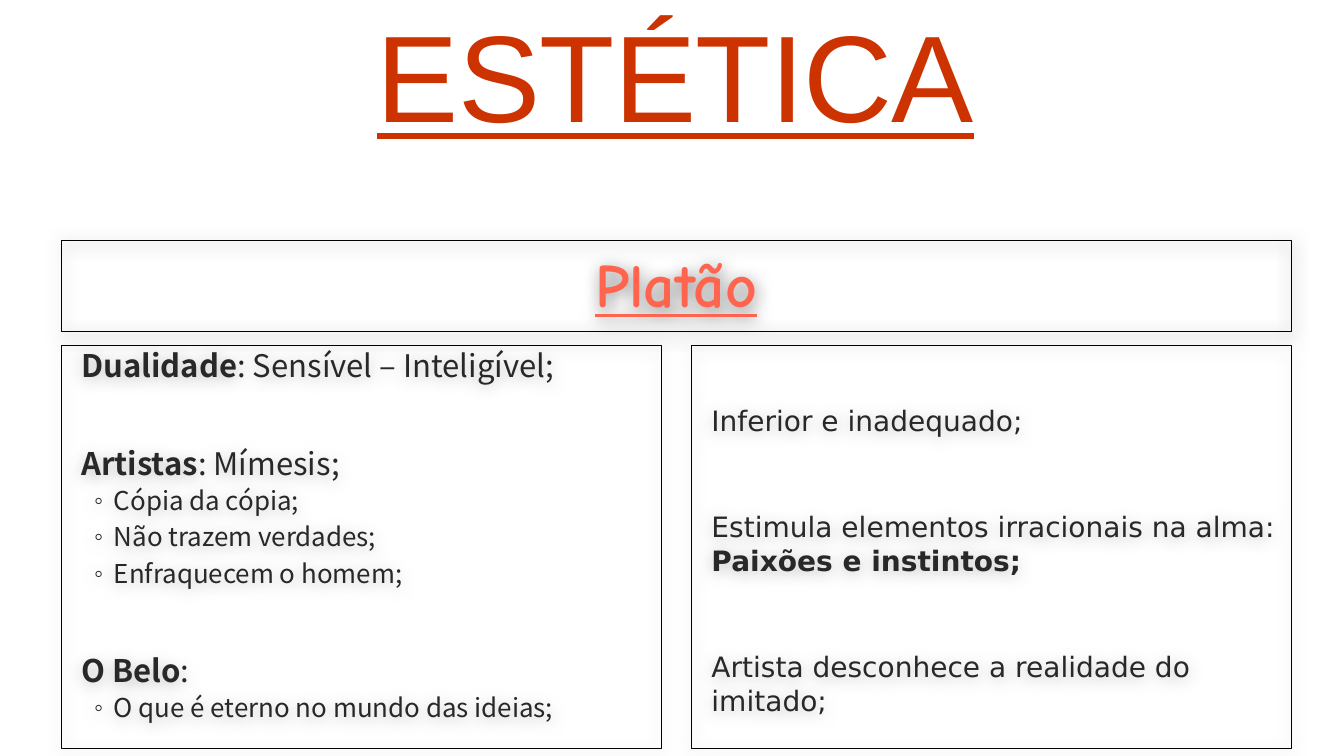
from lxml.etree import SubElement
from pptx import Presentation
from pptx.dml.color import RGBColor
from pptx.enum.shapes import MSO_SHAPE as Preset
from pptx.enum.text import MSO_ANCHOR as Anchor, MSO_AUTO_SIZE as AutoSize, PP_ALIGN as Align
from pptx.oxml.ns import qn
from pptx.util import Cm, Pt


def color(value):
    return RGBColor.from_string(value)


class SlideBuilder:
    ink = "282828"
    title_color = "CC3300"
    header_color = "FF644E"
    shadow_blur = Pt(12)
    shadow_distance = Pt(2)

    def __init__(self, slide):
        self.slide = slide

    def place(self, shape, left, top, width, height):
        shape.left, shape.top = Cm(left), Cm(top)
        shape.width, shape.height = Cm(width), Cm(height)

    def frame(self, shape, opacity):
        shape.fill.background()
        shape.line.color.rgb = color("000000")
        shape.line.width = Pt(0.75)
        shape.shadow.inherit = False
        effects = shape._element.spPr.find(qn("a:effectLst"))
        shadow = SubElement(effects, qn("a:outerShdw"), blurRad=str(self.shadow_blur),
                            dist=str(self.shadow_distance), dir="5400000", rotWithShape="0")
        shade = SubElement(shadow, qn("a:srgbClr"), val="000000")
        SubElement(shade, qn("a:alpha"), val=str(opacity * 1000))

    def text_frame(self, shape, anchor, side=0.25, top=0.13):
        text_frame = shape.text_frame
        text_frame.word_wrap = True
        text_frame.auto_size = AutoSize.NONE
        text_frame.vertical_anchor = anchor
        text_frame.margin_left = text_frame.margin_right = Cm(side)
        text_frame.margin_top, text_frame.margin_bottom = Cm(top), Cm(0.13)
        return text_frame

    def run(self, paragraph, text, font, size, hue, bold=False, underline=False):
        run = paragraph.add_run()
        run.text = text
        run.font.name, run.font.size = font, Pt(size)
        run.font.color.rgb = color(hue)
        run.font.bold, run.font.underline = bold, underline
        return run

    def title(self, text, box):
        shape = self.slide.shapes.title
        self.place(shape, *box)
        paragraph = self.text_frame(shape, Anchor.MIDDLE, side=0).paragraphs[0]
        paragraph.alignment, paragraph.line_spacing = Align.CENTER, 0.9
        run = self.run(paragraph, text, "Arial", 88, self.title_color, underline=True)
        run.font._element.set("spc", "-50")

    def header(self, text, box):
        shape = self.slide.shapes.add_shape(Preset.RECTANGLE, 0, 0, 0, 0)
        self.place(shape, *box)
        self.frame(shape, 50)
        paragraph = self.text_frame(shape, Anchor.TOP, side=0).paragraphs[0]
        paragraph.alignment = Align.CENTER
        self.run(paragraph, text, "Comic Neue", 44, self.header_color, True, True)

    def bullet(self, paragraph, symbol, margin, indent):
        properties = paragraph._p.get_or_add_pPr()
        properties.set("marL", str(Cm(margin)))
        properties.set("indent", str(Cm(indent)))
        if symbol:
            SubElement(properties, qn("a:buChar"), char=symbol)
        else:
            SubElement(properties, qn("a:buNone"))

    def body(self, index, box, items, font, size, detail_size, spacing, gap, top=0.13):
        shape = self.slide.placeholders[index]
        self.place(shape, *box)
        self.frame(shape, 25)
        text_frame = self.text_frame(shape, Anchor.TOP, top=top)
        for number, (level, runs) in enumerate(items):
            paragraph = text_frame.add_paragraph() if number else text_frame.paragraphs[0]
            paragraph.level = level
            if level:
                self.bullet(paragraph, "◦", 1.07, -0.5)
            else:
                self.bullet(paragraph, None, 0.25, 0)
            before = 2 if level else gap
            paragraph.space_before = Pt(before if number else 0)
            paragraph.space_after = Pt(4 if level else 2)
            paragraph.line_spacing = spacing
            for text, bold in runs:
                self.run(paragraph, text, font, detail_size if level else size, self.ink, bold)


def main():
    presentation = Presentation()
    presentation.slide_width, presentation.slide_height = Cm(33.87), Cm(19.05)
    slide = presentation.slides.add_slide(presentation.slide_layouts[3])
    builder = SlideBuilder(slide)

    left, top, width, height, full_width = 1.55, 8.71, 15.11, 10.16, 30.99
    builder.title("ESTÉTICA", (3.05, 0.18, 27.94, 3.81))
    builder.header("Platão", (left, 6.07, full_width, 2.29))

    ideas = [
        (0, [("Dualidade", True), (": Sensível – Inteligível;", False)]),
        (0, [("Artistas", True), (": Mímesis;", False)]),
        (1, [("Cópia da cópia;", False)]),
        (1, [("Não trazem verdades;", False)]),
        (1, [("Enfraquecem o homem;", False)]),
        (0, [("O Belo", True), (":", False)]),
        (1, [("O que é eterno no mundo das ideias;", False)]),
    ]
    builder.body(1, (left, top, width, height), ideas,
                 "Noto Sans CJK SC", 22.2, 18.5, 0.9, 44)

    criticism = [
        (0, [("Inferior e inadequado;", False)]),
        (0, [("Estimula elementos irracionais na alma: ", False), ("Paixões e instintos;", True)]),
        (0, [("Artista desconhece a realidade do imitado;", False)]),
    ]
    builder.body(2, (left + full_width - width, top, width, height), criticism,
                 "DejaVu Sans", 20, 20, 1, 50, top=1.45)
    presentation.save("out.pptx")


if __name__ == "__main__":
    main()
